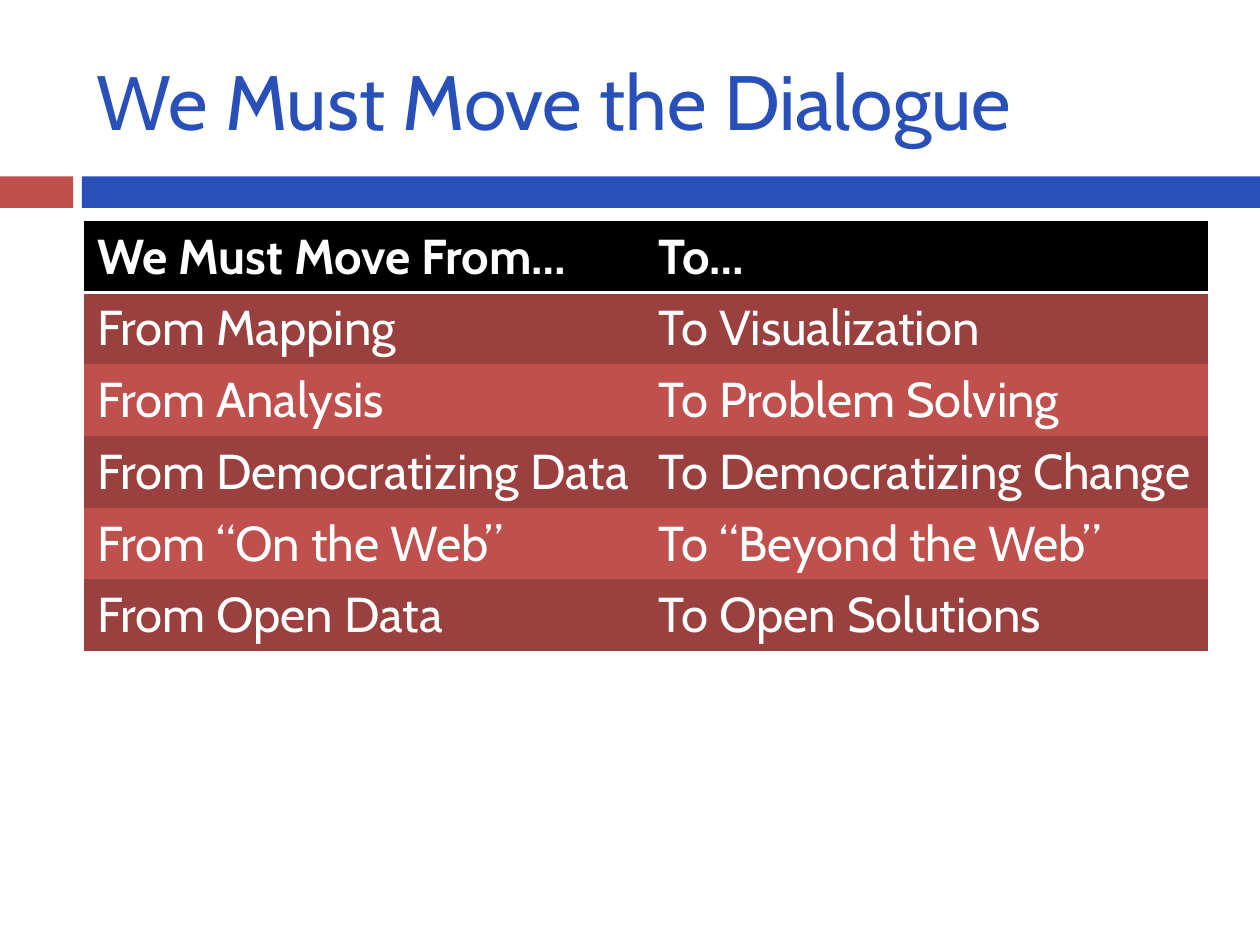
from lxml import etree
from pptx import Presentation
from pptx.dml.color import RGBColor
from pptx.enum.shapes import MSO_SHAPE
from pptx.enum.text import MSO_ANCHOR
from pptx.oxml.ns import qn
from pptx.util import Inches, Pt

RECTANGLE = MSO_SHAPE.RECTANGLE
MIDDLE = MSO_ANCHOR.MIDDLE

FONT = "Cabin"
BLUE, RED, DARK_RED = "2850B8", "C0504D", "9A403E"
BLACK, WHITE = "000000", "FFFFFF"
NO_STYLE = "{2D5ABB26-0587-4C30-8999-92F81FD0307C}"
LEFT, WIDTH = 0.67, 8.92
ROW_HEIGHT = 0.57

ROWS = [
    ("We Must Move From…", "To…"),
    ("From Mapping", "To Visualization"),
    ("From Analysis", "To Problem Solving"),
    ("From Democratizing Data", "To Democratizing Change"),
    ("From “On the Web”", "To “Beyond the Web”"),
    ("From Open Data", "To Open Solutions"),
]


def color(value):
    return RGBColor.from_string(value)


def set_font(paragraph, size, value, bold=False):
    font = paragraph.font
    font.name = FONT
    font.size = Pt(size)
    font.bold = bold
    font.color.rgb = color(value)


def add_bar(slide, left, width, fill):
    shape = slide.shapes.add_shape(
        RECTANGLE, Inches(left), Inches(1.4), Inches(width), Inches(0.25))
    shape.shadow.inherit = False
    shape.fill.solid()
    shape.fill.fore_color.rgb = color(fill)
    shape.line.fill.background()


def add_title(slide, text):
    box = slide.shapes.add_textbox(
        Inches(LEFT), Inches(0.25), Inches(WIDTH), Inches(1.08))
    frame = box.text_frame
    frame.word_wrap = True
    frame.vertical_anchor = MIDDLE
    frame.text = text
    set_font(frame.paragraphs[0], 44, BLUE)


def add_bottom_border(cell, value, points):
    properties = cell._tc.get_or_add_tcPr()
    line = etree.SubElement(properties, qn("a:lnB"), w=str(Pt(points)))
    fill = etree.SubElement(line, qn("a:solidFill"))
    etree.SubElement(fill, qn("a:srgbClr"), val=value)


def fill_cell(cell, text, row_index):
    header = row_index == 0
    cell.text = text
    set_font(cell.text_frame.paragraphs[0], 28, WHITE, bold=header)
    if header:
        add_bottom_border(cell, WHITE, 2)
    cell.fill.solid()
    band = DARK_RED if row_index % 2 else RED
    cell.fill.fore_color.rgb = color(BLACK if header else band)


def add_dialogue_table(slide):
    frame = slide.shapes.add_table(
        len(ROWS), len(ROWS[0]), Inches(LEFT), Inches(1.75),
        Inches(WIDTH), Inches(ROW_HEIGHT * len(ROWS)))
    table = frame.table
    table.horz_banding = False
    table._tbl.tblPr.find(qn("a:tableStyleId")).text = NO_STYLE
    for row_index, texts in enumerate(ROWS):
        for column_index, text in enumerate(texts):
            fill_cell(table.cell(row_index, column_index), text, row_index)


def main():
    presentation = Presentation()
    presentation.slide_width = Inches(10)
    presentation.slide_height = Inches(7.5)
    slide = presentation.slides.add_slide(presentation.slide_layouts[6])
    add_bar(slide, 0, 0.58, RED)
    add_bar(slide, 0.65, 9.35, BLUE)
    add_title(slide, "We Must Move the Dialogue")
    add_dialogue_table(slide)
    presentation.save("out.pptx")


if __name__ == "__main__":
    main()
